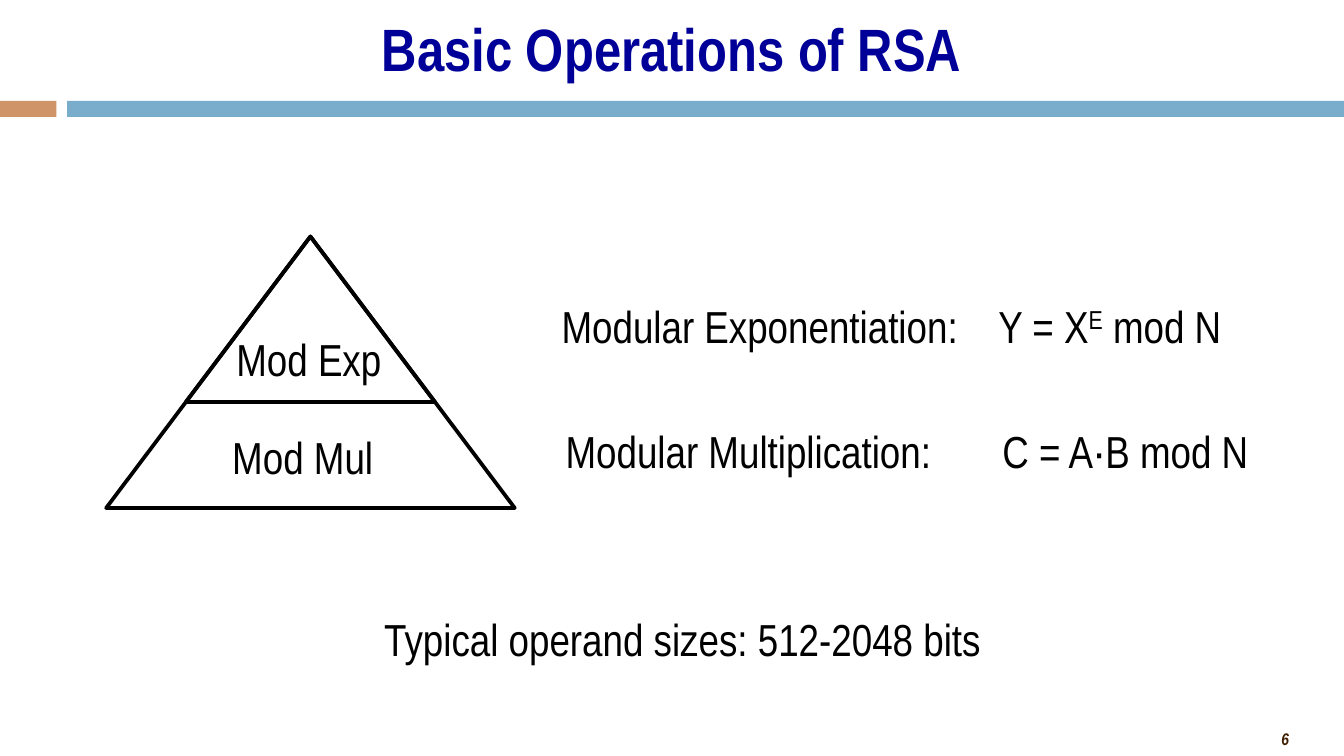
from lxml.etree import SubElement
from pptx import Presentation
from pptx.dml.color import RGBColor
from pptx.enum.shapes import MSO_SHAPE as Shape
from pptx.enum.text import MSO_ANCHOR as Anchor, PP_ALIGN as Align
from pptx.oxml.ns import qn
from pptx.util import Inches, Pt

COLORS = {"title": "000099", "ink": "000000", "number": "402000",
          "accent": "CF9467", "band": "7AADCC"}
FONT = "Arial Narrow"
FORMULA_TAB = 3.25


def color(name):
    return RGBColor.from_string(COLORS[name])


def add_text(slide, box, text, size=24, ink="ink", bold=False, italic=False,
             align=Align.LEFT, wrap=False):
    """Place one line of text and return its paragraph."""
    frame = slide.shapes.add_textbox(*map(Inches, box)).text_frame
    frame.word_wrap = wrap
    frame.vertical_anchor = Anchor.MIDDLE
    line = frame.paragraphs[0]
    line.text = text
    line.alignment = align
    font = line.font
    font.name, font.size, font.bold, font.italic = FONT, Pt(size), bold, italic
    font.color.rgb = color(ink)
    return line


def add_preset(slide, preset, box, fill=None, outline=None):
    shape = slide.shapes.add_shape(preset, *map(Inches, box))
    shape.shadow.inherit = False
    if fill:
        shape.fill.solid()
        shape.fill.fore_color.rgb = color(fill)
    else:
        shape.fill.background()
    if outline:
        shape.line.color.rgb = color(outline)
        shape.line.width = Pt(2)
    else:
        shape.line.fill.background()


def add_header(slide, left, top, width):
    # Two-tone band under the title
    for start, end, fill in ((0, 0.42, "accent"), (0.5, width, "band")):
        add_preset(slide, Shape.RECTANGLE,
                   (left + start, top + 0.75, end - start, 0.12), fill=fill)
    title = add_text(slide, (left + 0.42, top + 0.07, width - 0.84, 0.62),
                     "Basic Operations of RSA", 32, "title", bold=True,
                     align=Align.CENTER, wrap=True)
    title.line_spacing = 0.94


def add_pyramid(slide, left, top, width, height):
    # The tip is a smaller triangle sharing the apex
    tip_width, tip_height = width * 0.61, height * 0.61
    tip_left = left + (width - tip_width) / 2
    for box in ((left, top, width, height),
                (tip_left, top, tip_width, tip_height)):
        add_preset(slide, Shape.ISOSCELES_TRIANGLE, box, outline="ink")
    add_text(slide, (left + 0.87, top + 0.66, 1.29, 0.5), "Mod Exp")
    add_text(slide, (left + 0.84, top + 1.39, 1.26, 0.5), "Mod Mul")


def add_formula(slide, box, name, parts):
    """Name and formula, aligned by a tab stop; parts alternate base and superscript."""
    line = add_text(slide, box, f"{name}:\t{parts[0]}", wrap=True)
    properties = line._p.get_or_add_pPr()
    stops = SubElement(properties, qn("a:tabLst"))
    SubElement(stops, qn("a:tab"), pos=str(Inches(FORMULA_TAB)), algn="l")
    # Tab stops come before the default run properties
    properties.insert(0, stops)
    for index, part in enumerate(parts[1:], 1):
        run = line.add_run()
        run.text = part
        if index % 2:
            run._r.get_or_add_rPr().set("baseline", "30000")


def add_formulas(slide, left, top):
    add_formula(slide, (left, top, 5.24, 0.5),
                "Modular Exponentiation", ("Y = X", "E", " mod N"))
    add_formula(slide, (left + 0.03, top + 0.93, 5.36, 0.5),
                "Modular Multiplication", ("C = A∙B mod N",))


def add_page_number(slide, left, top, width, height):
    add_text(slide, (left, top, width, height), "6", 9, "number",
             bold=True, italic=True, align=Align.RIGHT, wrap=True)


def main():
    deck = Presentation()
    # Widescreen, 16:9
    deck.slide_width = Inches(10)
    deck.slide_height = deck.slide_width * 9 // 16
    slide = deck.slides.add_slide(deck.slide_layouts[6])
    add_header(slide, 0, 0, 10)
    add_pyramid(slide, 0.79, 1.76, 3.04, 2.02)
    add_formulas(slide, 4.08, 2.17)
    add_text(slide, (2.76, 4.5, 4.7, 0.5),
             "Typical operand sizes: 512-2048 bits")
    add_page_number(slide, 7.52, 5.38, 2.17, 0.23)
    deck.save("out.pptx")


if __name__ == "__main__":
    main()
